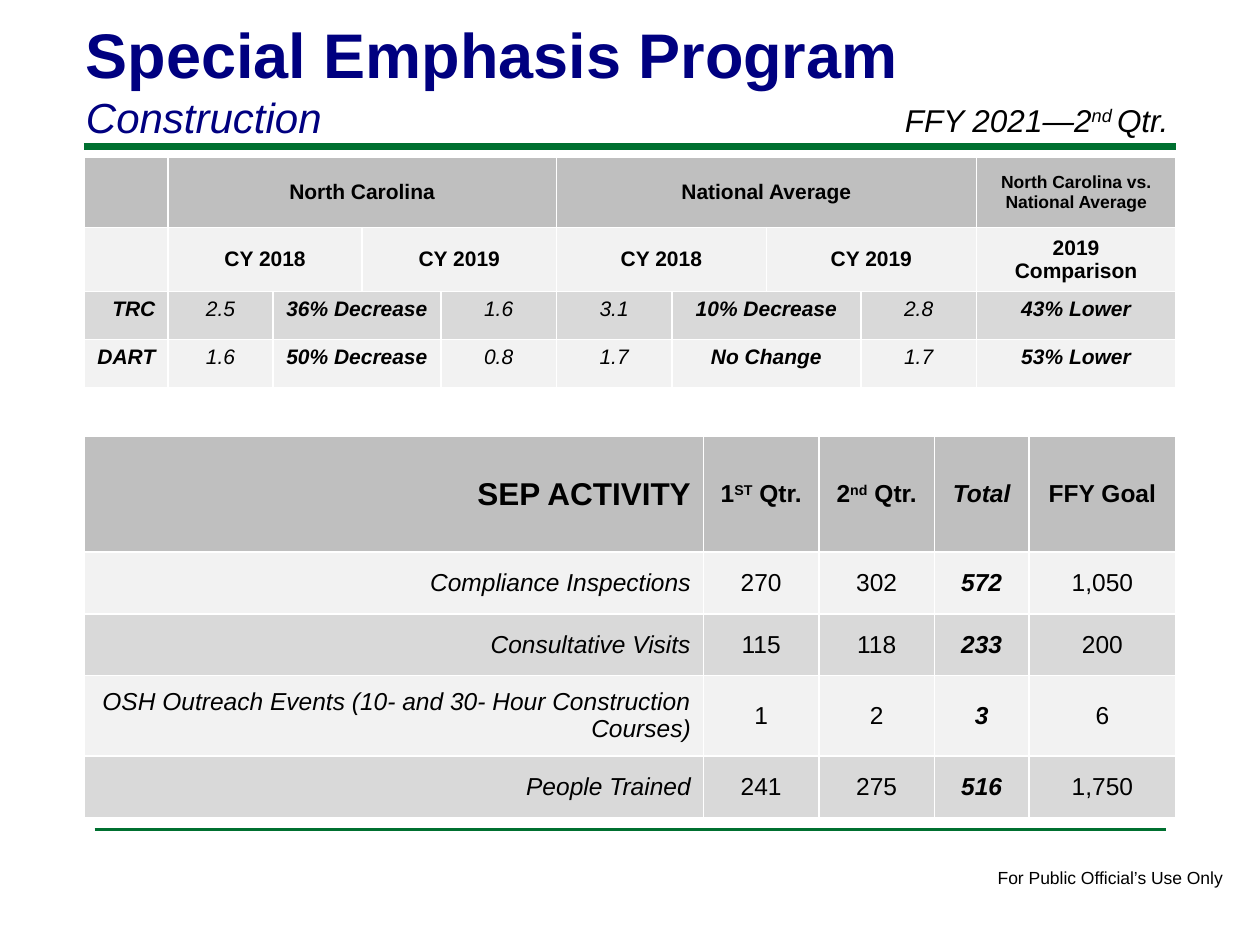
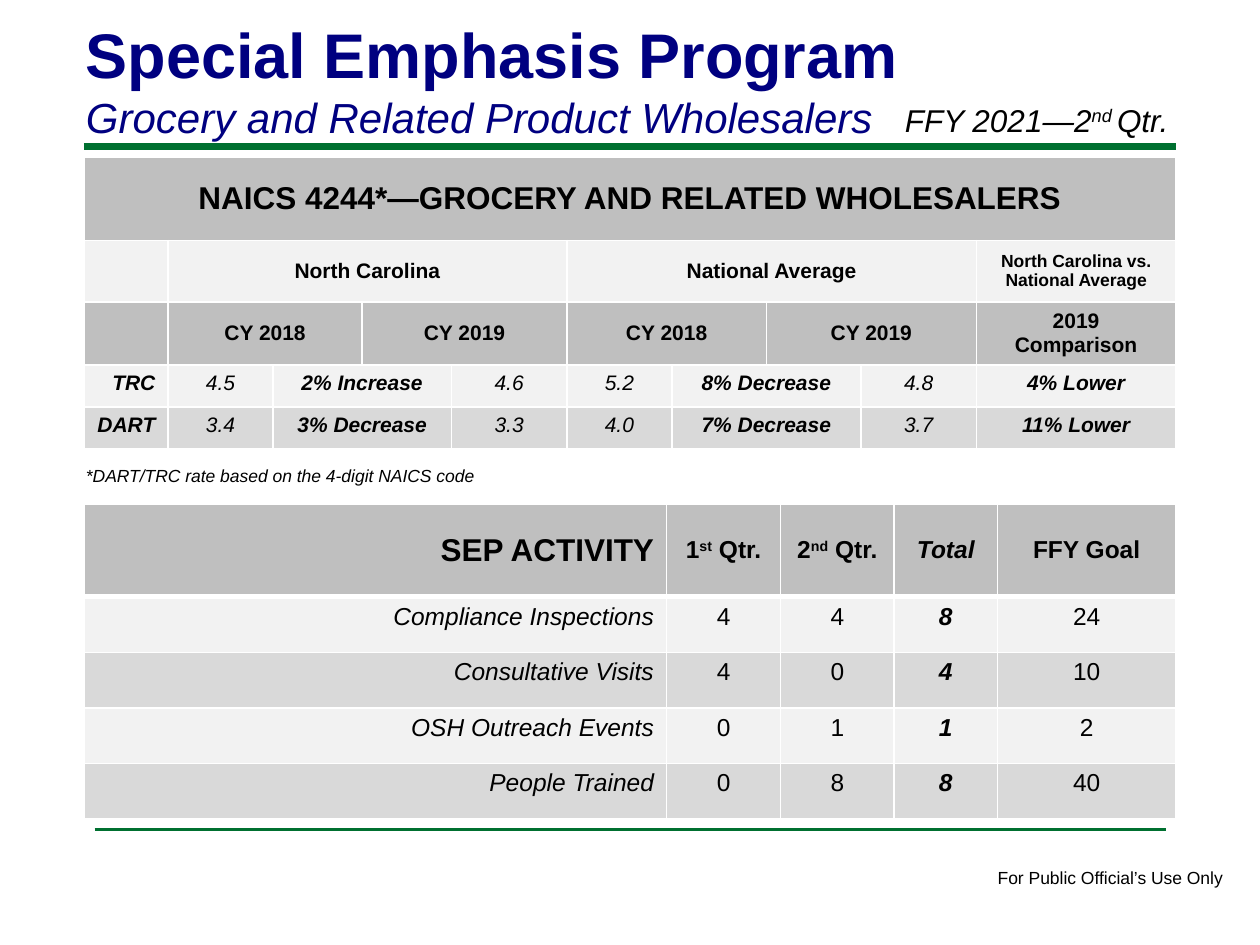
from pptx import Presentation as Deck
from pptx.dml.color import RGBColor as Rgb
from pptx.enum.shapes import MSO_CONNECTOR as Link
from pptx.enum.text import MSO_ANCHOR as Anchor, PP_ALIGN as Align
from pptx.oxml.ns import qn
from pptx.util import Pt
from lxml.etree import SubElement as Sub, Element as Elem

BLACK, WHITE, NAVY, GREEN = "000000", "FFFFFF", "000080", "007030"
HEAD, PALE, BAND = "BFBFBF", "F2F2F2", "D9D9D9"
LEFT, MID, RIGHT = Align.LEFT, Align.CENTER, Align.RIGHT


def paint(fmt, hue):
    """Give a fill or line a solid colour."""
    fmt.solid()
    fmt.fore_color.rgb = Rgb.from_string(hue)


def look(size, bold=False, italic=False):
    """Return the font values of one text style."""
    return dict(name="Arial", size=Pt(size), bold=bold, italic=italic)


TITLE, SUB, TERM = look(36, True), look(24, italic=True), look(18, italic=True)
BIG, NAME, SMALL = look(18, True), look(12, True), look(10, True)
NOTE, FOOT = look(10, italic=True), look(10)
RATE, SHIFT = look(12, italic=True), look(12, True, True)
QTR, SUM = look(14, True), look(14, True, True)
ITEM, COUNT = look(14, italic=True), look(14)


class Page:
    """Holds the deck style and the slide being built."""

    def __init__(self, deck):
        """Keep the deck."""
        self.deck = deck

    def start(self, topic):
        """Open a slide with its rules, footer, title and term."""
        self.slide = self.deck.slides.add_slide(self.deck.slide_layouts[6])
        self.rule(48, 672, 84, 4)
        self.rule(54, 666, 474, 2)
        self.text(563, 492, 145, 19.5, [("For Public Official’s Use Only", FOOT)], wrap=False)
        self.text(42, 4.5, 594, 80, [("Special Emphasis Program", TITLE), (topic, SUB)],
                  NAVY, Anchor.BOTTOM)
        self.text(510, 54, 180, 29, [("FFY 2021—2^nd ^Qtr.", TERM)])

    def rule(self, left, right, y, width):
        """Draw a level green line."""
        line = self.slide.shapes.add_connector(
            Link.STRAIGHT, Pt(left), Pt(y), Pt(right), Pt(y))
        paint(line.line.fill, GREEN)
        line.line.width = Pt(width)
        Sub(line._element.spPr, qn("a:effectLst"))

    def label(self, para, text, style, hue=BLACK, align=LEFT):
        """Fill a paragraph, raising the parts between carets."""
        para.alignment = align
        for i, part in enumerate(text.split("^")):
            run = para.add_run()
            run.text = part
            for key, val in style.items():
                setattr(run.font, key, val)
            run.font.color.rgb = Rgb.from_string(hue)
            if i % 2:
                run._r.get_or_add_rPr().set("baseline", "30000")

    def text(self, x, y, w, h, lines, hue=BLACK, anchor=Anchor.TOP, wrap=True):
        """Add a text box with one paragraph a line."""
        frame = self.slide.shapes.add_textbox(Pt(x), Pt(y), Pt(w), Pt(h)).text_frame
        frame.word_wrap, frame.vertical_anchor = wrap, anchor
        for i, (text, style) in enumerate(lines):
            para = frame.add_paragraph() if i else frame.paragraphs[0]
            self.label(para, text, style, hue)

    def edge(self, cell, base):
        """Give a cell white borders, the bottom one of its own width."""
        props = cell._tc.get_or_add_tcPr()
        for i, side in enumerate("LRTB"):
            width = Pt(base if side == "B" else 1)
            line = Elem(qn(f"a:ln{side}"), w=str(int(width)))
            Sub(Sub(line, qn("a:solidFill")), qn("a:srgbClr"), val=WHITE)
            props.insert(i, line)

    def grid(self, top, cols, rows, cells, fills, heads, body=Anchor.TOP, base=1):
        """Add a table; None in a row widens the cell before it."""
        table = self.slide.shapes.add_table(
            len(rows), len(cols), Pt(48), Pt(top), Pt(sum(cols)), Pt(sum(rows))).table
        for col, width in zip(table.columns, cols):
            col.width = Pt(width)
        for r, (high, line, hue) in enumerate(zip(rows, cells, fills)):
            table.rows[r].height = Pt(high)
            for c, item in enumerate(line):
                cell = table.cell(r, c)
                paint(cell.fill, hue)
                self.edge(cell, 1 if r else base)
                if item is None:
                    continue
                last = c
                while last + 1 < len(cols) and line[last + 1] is None:
                    last += 1
                if last > c:
                    cell.merge(table.cell(r, last))
                cell.vertical_anchor = Anchor.MIDDLE if r < heads else body
                if item:
                    align = MID if c or last > c else RIGHT
                    self.label(cell.text_frame.paragraphs[0], *item, align=align)

    def rates(self, cols, rows, fills, data, banner=None):
        """Add the table of injury rates."""
        years = [("CY 2018", NAME), None, ("CY 2019", NAME), None]
        cells = [[(banner, BIG)] + [None] * 9] if banner else []
        cells += [
            [(), ("North Carolina", NAME), None, None, None,
             ("National Average", NAME), None, None, None,
             ("North Carolina vs. National Average", SMALL)],
            [(), *years, *years, ("2019 Comparison", NAME)]]
        heads = len(cells)
        for name, *state, gap in data:
            line = [(name, SHIFT)]
            for old, move, new in (state[:3], state[3:]):
                line += [(old, RATE), (move, SHIFT), None, (new, RATE)]
            cells.append(line + [(gap, SHIFT)])
        self.grid(90, cols, rows, cells, fills, heads)

    def work(self, top, cols, rows, first, data, body, base):
        """Add the table of program activity."""
        cells = [[("SEP ACTIVITY", BIG), (first, QTR), ("2^nd^ Qtr.", QTR),
                  ("Total", SUM), ("FFY Goal", QTR)]]
        cells += [list(zip(line, (ITEM, COUNT, COUNT, SUM, COUNT))) for line in data]
        self.grid(top, cols, rows, cells, [HEAD] + [PALE, BAND] * 2, 1, body, base)


def main():
    """Build both slides."""
    deck = Deck()
    deck.slide_width, deck.slide_height = Pt(720), Pt(540)
    page = Page(deck)

    page.start("Construction")
    page.work(249.5, [354, 66, 66, 54, 84], [66, 35.25, 35.25, 46, 35.25], "1^ST^ Qtr.", [
        ("Compliance Inspections", "270", "302", "572", "1,050"),
        ("Consultative Visits", "115", "118", "233", "200"),
        ("OSH Outreach Events (10- and 30- Hour Construction Courses)", "1", "2", "3", "6"),
        ("People Trained", "241", "275", "516", "1,750"),
    ], Anchor.MIDDLE, 1)
    page.rates([48, 60, 51, 45, 66, 66, 54, 54, 66, 114], [40, 36.5, 27.5, 27.5],
               [HEAD, PALE, BAND, PALE], [
        ("TRC", "2.5", "36% Decrease", "1.6", "3.1", "10% Decrease", "2.8", "43% Lower"),
        ("DART", "1.6", "50% Decrease", "0.8", "1.7", "No Change", "1.7", "53% Lower"),
    ])

    page.start("Grocery and Related Product Wholesalers")
    page.text(42, 262, 243, 19.5, [("*DART/TRC rate based on the 4-digit NAICS code", NOTE)])
    page.work(288, [333, 65, 65, 59, 102], [53] + [31.75] * 4, "1^st^ Qtr.", [
        ("Compliance Inspections", "4", "4", "8", "24"),
        ("Consultative Visits", "4", "0", "4", "10"),
        ("OSH Outreach Events", "0", "1", "1", "2"),
        ("People Trained", "0", "8", "8", "40"),
    ], Anchor.TOP, 3)
    page.rates([48, 60, 51, 51, 66, 60, 54, 54, 66, 114], [47.5, 35, 35.5, 24, 24],
               [HEAD, PALE, HEAD, PALE, BAND], [
        ("TRC", "4.5", "2% Increase", "4.6", "5.2", "8% Decrease", "4.8", "4% Lower"),
        ("DART", "3.4", "3% Decrease", "3.3", "4.0", "7% Decrease", "3.7", "11% Lower"),
    ], "NAICS 4244*—GROCERY AND RELATED WHOLESALERS")

    deck.save("out.pptx")


if __name__ == "__main__":
    main()
